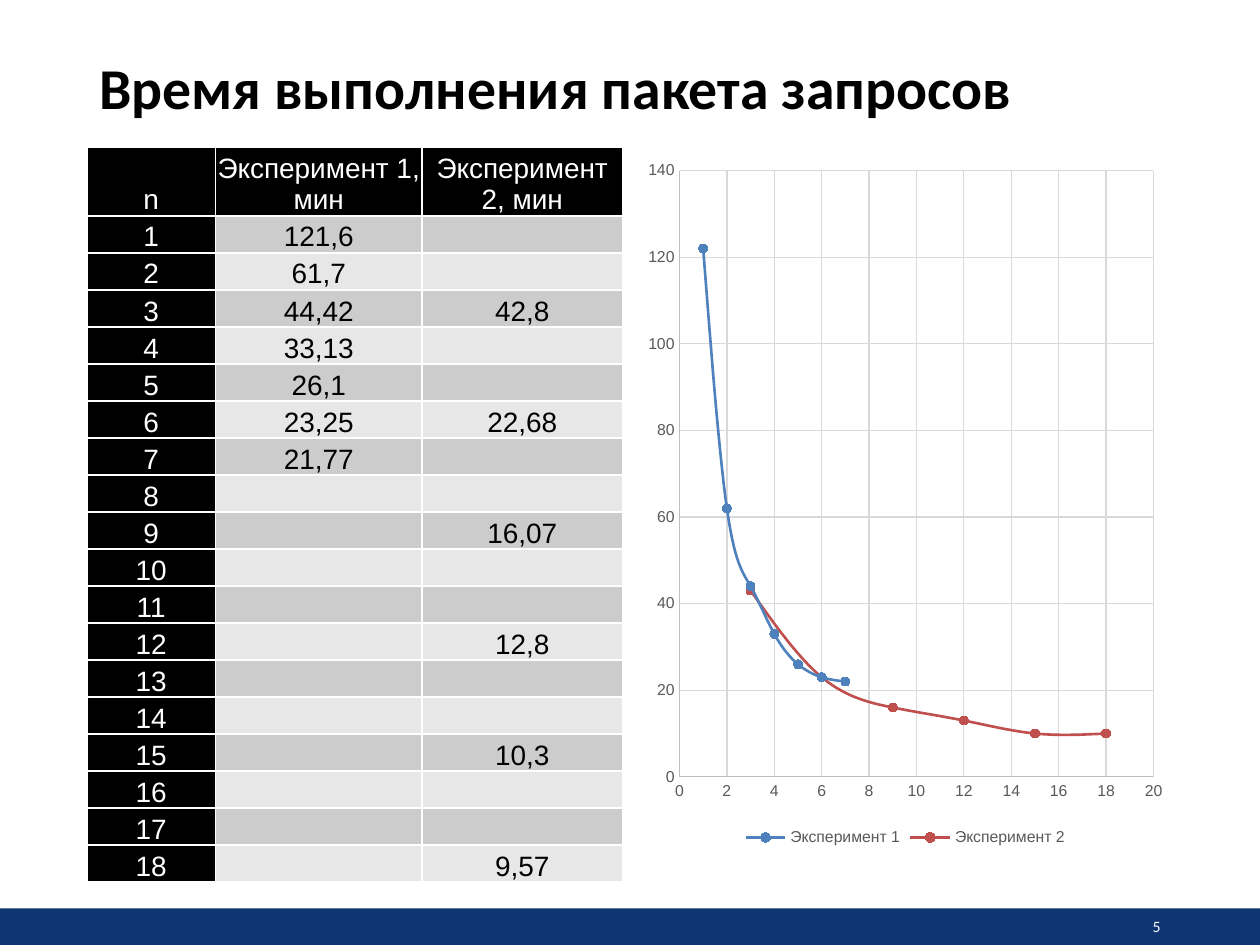
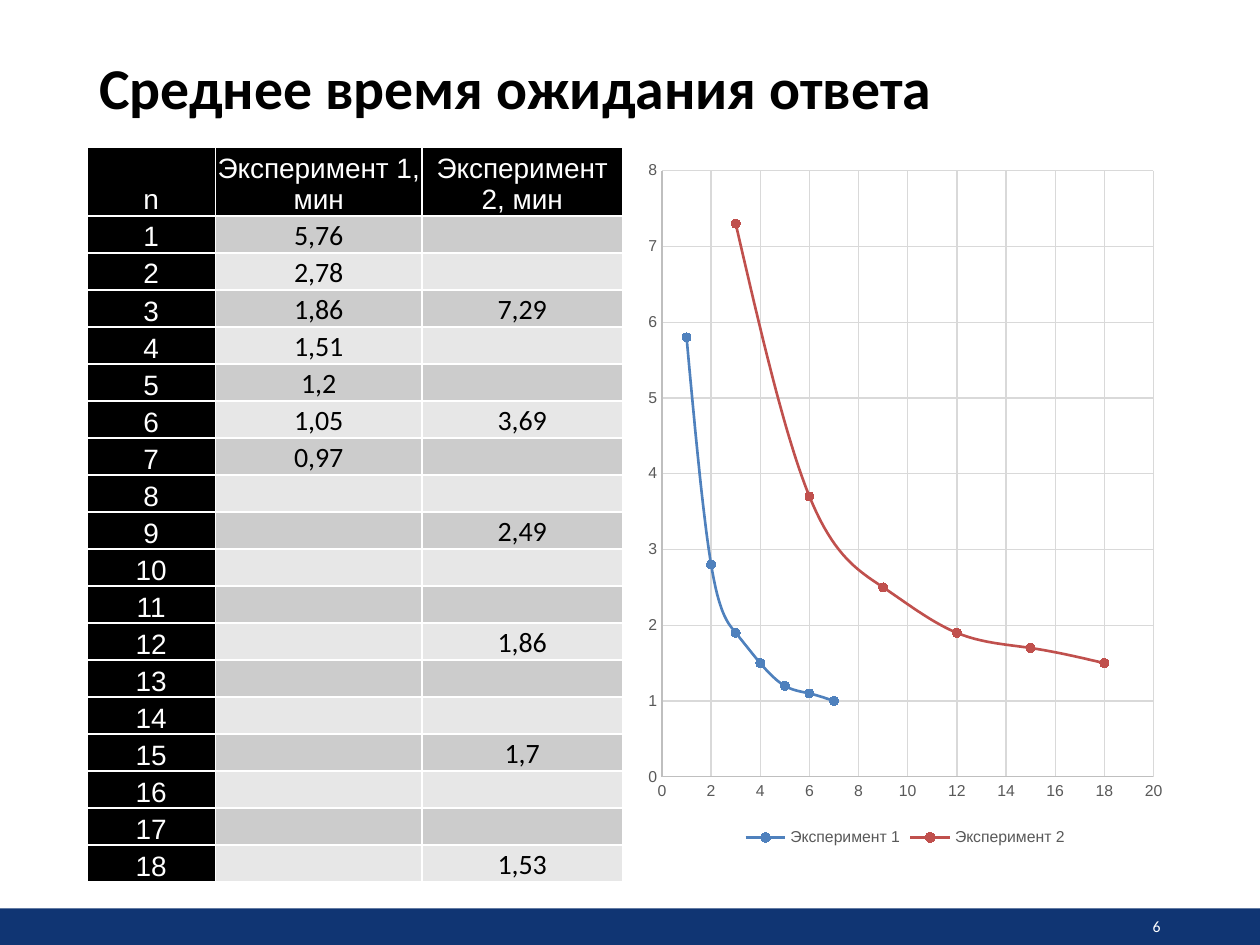
"""Builds two slides that compare query times in two experiments."""
from lxml import etree
from pptx import Presentation
from pptx.chart.data import XyChartData
from pptx.dml.color import RGBColor
from pptx.enum.chart import XL_CHART_TYPE, XL_LEGEND_POSITION, XL_MARKER_STYLE, XL_TICK_MARK
from pptx.enum.shapes import MSO_SHAPE
from pptx.enum.text import MSO_ANCHOR, PP_ALIGN
from pptx.oxml.ns import qn
from pptx.util import Inches, Pt

SMOOTH = XL_CHART_TYPE.XY_SCATTER_SMOOTH
BOTTOM = XL_LEGEND_POSITION.BOTTOM
CIRCLE = XL_MARKER_STYLE.CIRCLE
NO_TICK = XL_TICK_MARK.NONE
RECT = MSO_SHAPE.RECTANGLE
MIDDLE, LOW = MSO_ANCHOR.MIDDLE, MSO_ANCHOR.BOTTOM
LEFT, CENTER, RIGHT = PP_ALIGN.LEFT, PP_ALIGN.CENTER, PP_ALIGN.RIGHT

COLORS = {
    "band": "103573", "white": "FFFFFF", "black": "000000",
    "odd": "CCCCCC", "even": "E7E7E7",
    "label": "595959", "axis": "BFBFBF", "grid": "D9D9D9",
    "first": "4F81BD", "second": "C0504D",
}
HEADS = ["n", "Эксперимент 1, мин", "Эксперимент 2, мин"]
NAMES = ["Эксперимент 1", "Эксперимент 2"]
COUNT = 18
SIDE, TOP = 0.69, 1.17
WIDTHS = [1.02, 1.64, 1.59]
HEAD_H, BODY_H = 0.5, 5.29

SLIDES = [
    {
        "title": "Время выполнения пакета запросов", "page": 5,
        "font": "Arial", "peak": 140, "step": 20, "digits": 0,
        "runs": [
            dict(enumerate(["121,6", "61,7", "44,42", "33,13", "26,1", "23,25", "21,77"], 1)),
            dict(zip(range(3, 19, 3), ["42,8", "22,68", "16,07", "12,8", "10,3", "9,57"])),
        ],
    },
    {
        "title": "Среднее время ожидания ответа", "page": 6,
        "font": "Calibri", "peak": 8, "step": 1, "digits": 1,
        "runs": [
            dict(enumerate(["5,76", "2,78", "1,86", "1,51", "1,2", "1,05", "0,97"], 1)),
            dict(zip(range(3, 19, 3), ["7,29", "3,69", "2,49", "1,86", "1,7", "1,53"])),
        ],
    },
]


def color(name):
    """Return the named colour."""
    return RGBColor.from_string(COLORS[name])


def style(font, size, tint, face="Arial", bold=False):
    """Set the look of a font."""
    font.size = Pt(size)
    font.name = face
    font.bold = bold
    font.color.rgb = color(tint)


def add_text(slide, box, text, size, tint, align=LEFT, bold=False):
    """Add one line of text in a box."""
    frame = slide.shapes.add_textbox(*map(Inches, box)).text_frame
    frame.word_wrap = True
    frame.vertical_anchor = MIDDLE
    frame.text = text
    para = frame.paragraphs[0]
    para.alignment = align
    if bold:
        para.line_spacing = 0.9
    style(para.runs[0].font, size, tint, "Calibri", bold)


def add_frame(slide, title, page):
    """Add the band, page number and title."""
    band = slide.shapes.add_shape(RECT, 0, Inches(7.21), Inches(10), Inches(0.29))
    band.shadow.inherit = False
    band.fill.solid()
    band.fill.fore_color.rgb = color("band")
    band.line.fill.background()
    add_text(slide, (7.06, 7.21, 2.25, 0.28), str(page), 9, "white", RIGHT)
    add_text(slide, (SIDE, 0.4, 8.62, 0.64), title, 33, "black", bold=True)


def add_edge(cell, side):
    """Draw a white border on one side of a cell."""
    props = cell._tc.get_or_add_tcPr()
    line = etree.SubElement(props, qn(f"a:ln{side}"), w=str(Pt(1)))
    fill = etree.SubElement(line, qn("a:solidFill"))
    etree.SubElement(fill, qn("a:srgbClr"), val=COLORS["white"])


def fill_cell(cell, text, back, tint, face="Arial"):
    """Fill, border and write one cell."""
    for side in "LRTB":
        add_edge(cell, side)
    cell.fill.solid()
    cell.fill.fore_color.rgb = color(back)
    cell.margin_left = cell.margin_right = cell.margin_top = Inches(0.01)
    cell.margin_bottom = 0
    cell.vertical_anchor = LOW
    para = cell.text_frame.paragraphs[0]
    para.text = text
    para.alignment = CENTER
    for run in para.runs:
        style(run.font, 16, tint, face)
    if not text:
        etree.SubElement(para._p, qn("a:endParaRPr"), sz="1600")


def add_grid(slide, runs, face):
    """Add the table of measured times."""
    box = (SIDE, TOP, sum(WIDTHS), HEAD_H + BODY_H)
    table = slide.shapes.add_table(COUNT + 1, len(HEADS), *map(Inches, box)).table
    table.first_row = table.horz_banding = False
    for col, width in zip(table.columns, WIDTHS):
        col.width = Inches(width)
    for num, row in enumerate(table.rows):
        row.height = Inches(BODY_H / COUNT if num else HEAD_H)
    for col, head in enumerate(HEADS):
        fill_cell(table.cell(0, col), head, "black", "white")
    for num in range(1, COUNT + 1):
        fill_cell(table.cell(num, 0), str(num), "black", "white")
        back = "odd" if num % 2 else "even"
        for col, run in enumerate(runs, 1):
            fill_cell(table.cell(num, col), run.get(num, ""), back, "black", face)


def set_axis(axis, peak, step):
    """Set the scale and look of an axis."""
    axis.minimum_scale, axis.maximum_scale, axis.major_unit = 0, peak, step
    axis.major_tick_mark = axis.minor_tick_mark = NO_TICK
    axis.has_major_gridlines = True
    style(axis.tick_labels.font, 9, "label")
    for line, tint in ((axis.format.line, "axis"), (axis.major_gridlines.format.line, "grid")):
        line.width = Pt(0.75)
        line.color.rgb = color(tint)


def set_flag(root, tag, value):
    """Set the value of each chart element with this tag."""
    for node in root.iter(qn(tag)):
        node.set("val", value)


def get_data(runs, digits):
    """Return rounded chart data with gaps for missing times."""
    data = XyChartData()
    for name, run in zip(NAMES, runs):
        series = data.add_series(name)
        for num in range(1, COUNT + 1):
            text = run.get(num)
            value = round(float(text.replace(",", ".")), digits) if text else None
            series.add_data_point(num, value)
    return data


def add_plot(slide, data, peak, step):
    """Add the chart of both experiments."""
    box = map(Inches, (5.06, TOP, 4.25, 5.59))
    chart = slide.shapes.add_chart(SMOOTH, *box, data).chart
    style(chart.font, 10, "black")
    chart.has_title = False
    chart.has_legend = True
    chart.legend.position = BOTTOM
    chart.legend.include_in_layout = False
    style(chart.legend.font, 9, "label")
    set_axis(chart.category_axis, 20, 2)
    set_axis(chart.value_axis, peak, step)
    plot = chart.plots[0]
    plot.vary_by_categories = False
    for series, tint in zip(plot.series, ("first", "second")):
        series.format.line.width = Pt(1.5)
        series.format.line.color.rgb = color(tint)
        mark = series.marker
        mark.style, mark.size = CIRCLE, 5
        mark.format.fill.solid()
        mark.format.fill.fore_color.rgb = color(tint)
        mark.format.line.color.rgb = color(tint)
    set_flag(chart._chartSpace, "c:smooth", "1")
    set_flag(chart._chartSpace, "c:dispBlanksAs", "span")


def main():
    """Build and save the slides."""
    deck = Presentation()
    deck.slide_width, deck.slide_height = Inches(10), Inches(7.5)
    for item in SLIDES:
        slide = deck.slides.add_slide(deck.slide_layouts[6])
        add_frame(slide, item["title"], item["page"])
        add_grid(slide, item["runs"], item["font"])
        data = get_data(item["runs"], item["digits"])
        add_plot(slide, data, item["peak"], item["step"])
    deck.save("out.pptx")


if __name__ == "__main__":
    main()
